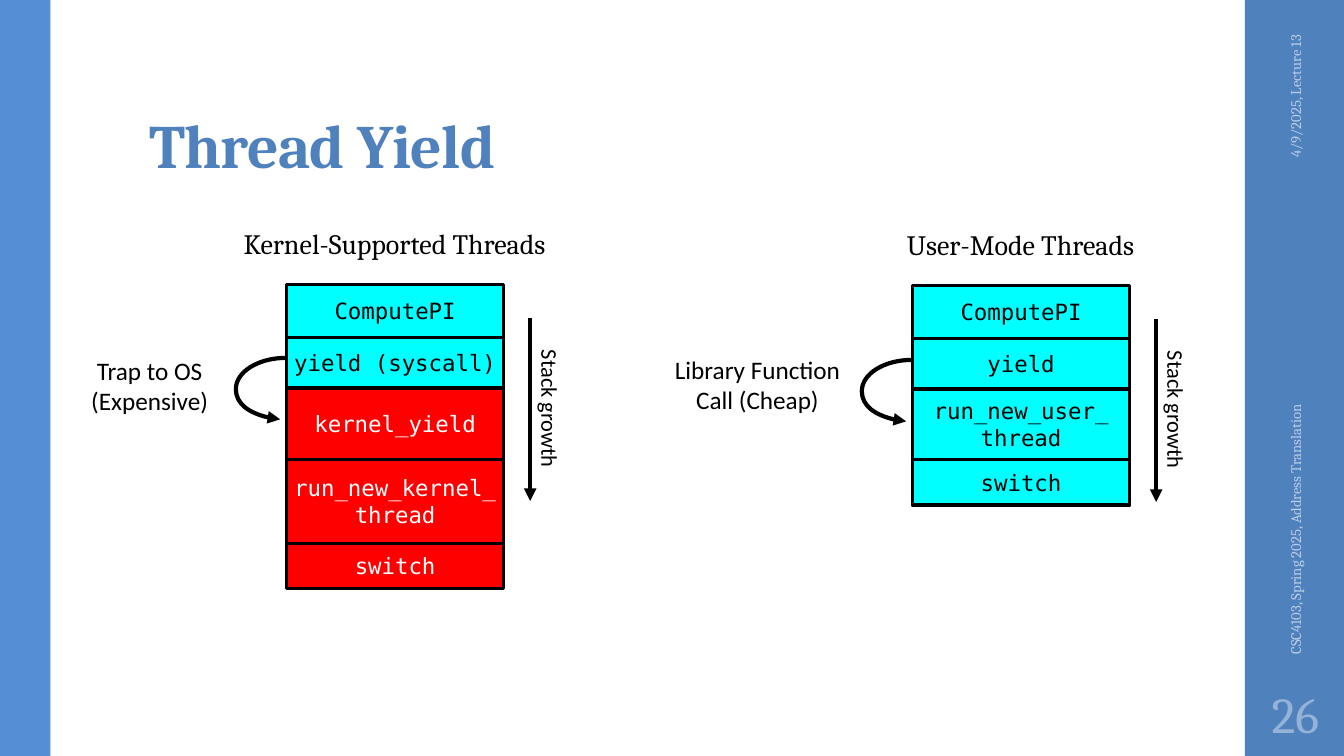
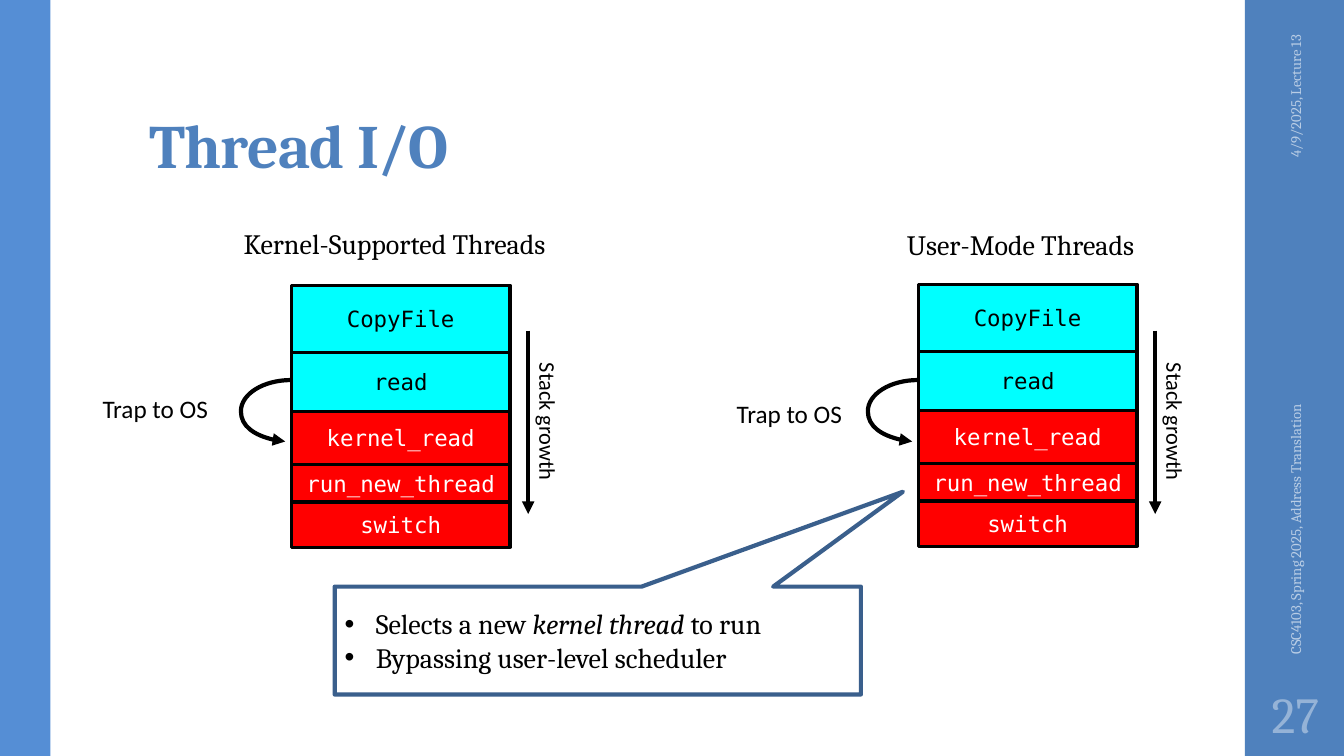
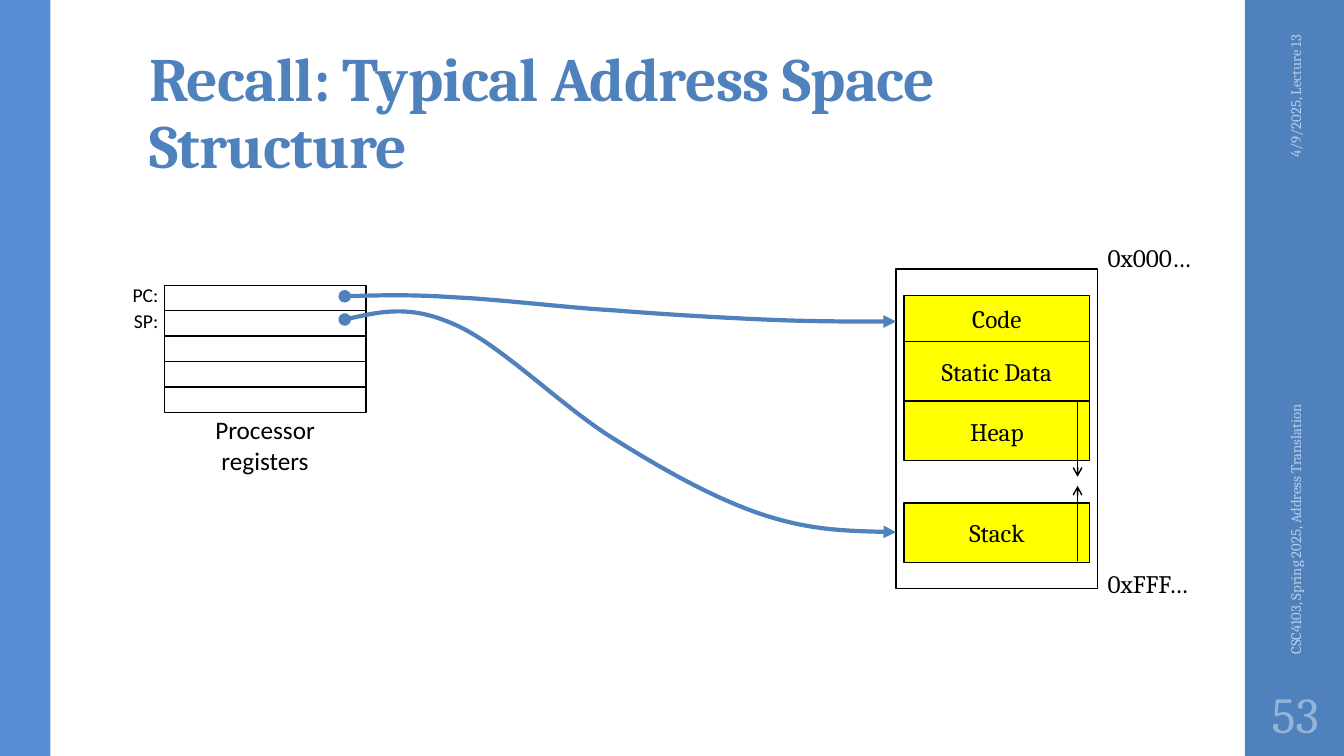
"""Build three lecture slides on thread switching and address space layout."""
from lxml.etree import SubElement
from pptx import Presentation
from pptx.dml.color import RGBColor
from pptx.enum.shapes import MSO_CONNECTOR, MSO_SHAPE
from pptx.enum.text import MSO_ANCHOR, MSO_AUTO_SIZE, PP_ALIGN
from pptx.oxml.ns import qn
from pptx.util import Inches, Pt

CELL = Inches(0.1)
COLUMNS, ROWS = 133.33, 75
COLORS = {
    "blue": "4F81BD", "light_blue": "558ED5", "dark_blue": "3A5F8C",
    "footer": "B9CDE5", "number": "95B3D7", "black": "000000",
    "white": "FFFFFF", "user": "00FFFF", "kernel": "FF0000", "yellow": "FFFF00",
}
SERIF, SANS, MONO = "Cambria", "Calibri", "DejaVu Sans Mono"


def add_box(slide, place, text="", size=18, font=SERIF, color="black", fill=None,
            line=None, weight=1, align=PP_ALIGN.CENTER, anchor=MSO_ANCHOR.MIDDLE,
            wrap=False, rotation=0, preset=MSO_SHAPE.RECTANGLE):
    """Add a text box, or a shape when it has a fill or a line; place is in cells."""
    left, top, width, height = [round(value * CELL) for value in place]
    if fill or line:
        shape = slide.shapes.add_shape(preset, left, top, width, height)
        shape.shadow.inherit = False
        if fill:
            shape.fill.solid()
            shape.fill.fore_color.rgb = RGBColor.from_string(COLORS[fill])
        else:
            shape.fill.background()
        if line:
            shape.line.color.rgb = RGBColor.from_string(COLORS[line])
            shape.line.width = Pt(weight)
        else:
            shape.line.fill.background()
    else:
        shape = slide.shapes.add_textbox(left, top, width, height)
    shape.rotation = rotation
    shape.text_frame.text = text
    shape.text_frame.word_wrap = wrap
    shape.text_frame.vertical_anchor = anchor
    for paragraph in shape.text_frame.paragraphs:
        paragraph.alignment = align
        for run in paragraph.runs:
            run.font.size = Pt(size)
            run.font.name = font
            run.font.color.rgb = RGBColor.from_string(COLORS[color])
    return shape


def add_arrow(slide, points, color="black", weight=3, head=None, tail="triangle"):
    """Join two points by a straight line, or more points by Bezier curves."""
    points = [(round(x * CELL), round(y * CELL)) for x, y in points]
    if len(points) == 2:
        shape = slide.shapes.add_connector(MSO_CONNECTOR.STRAIGHT, *points[0], *points[1])
    else:
        builder = slide.shapes.build_freeform(*points[0])
        builder.add_line_segments(points[1:], close=False)
        shape = builder.convert_to_shape()
        shape.fill.background()
        outline = shape.element.find(".//" + qn("a:path"))
        segments = outline.findall(qn("a:lnTo"))
        for start in range(0, len(segments), 3):
            curve = SubElement(outline, qn("a:cubicBezTo"))
            for segment in segments[start:start + 3]:
                curve.append(segment[0])
                outline.remove(segment)
    shape.line.color.rgb = RGBColor.from_string(COLORS[color])
    shape.line.width = Pt(weight)
    line = shape.line._get_or_add_ln()
    for tag, kind in (("a:headEnd", head), ("a:tailEnd", tail)):
        if kind:
            SubElement(line, qn(tag)).set("type", kind)
    SubElement(shape.element.spPr, qn("a:effectLst"))


presentation = Presentation()
presentation.slide_width = round(COLUMNS * CELL)
presentation.slide_height = ROWS * CELL
layout = presentation.slide_layouts[5]

layout_title = layout.placeholders[0]
layout_title.left, layout_title.top = round(13.8 * CELL), round(3.2 * CELL)
layout_title.width, layout_title.height = 106 * CELL, round(15.3 * CELL)
title_frame = layout_title.text_frame
title_frame.vertical_anchor = MSO_ANCHOR.BOTTOM
title_frame.auto_size = MSO_AUTO_SIZE.NONE
title_frame.word_wrap = True
title_frame.margin_top, title_frame.margin_bottom = Inches(0.03), Inches(0.05)

slides = []
for title, number in (("Thread Yield", "26"), ("Thread I/O", "27"),
                      ("Recall: Typical Address Space Structure", "53")):
    slide = presentation.slides.add_slide(layout)
    slides.append(slide)
    slide.shapes.title.text_frame.text = title
    paragraph = slide.shapes.title.text_frame.paragraphs[0]
    paragraph.alignment = PP_ALIGN.LEFT
    paragraph.line_spacing = 0.9
    run = paragraph.runs[0]
    run.font.size, run.font.name, run.font.bold = Pt(44), SERIF, True
    run.font.color.rgb = RGBColor.from_string(COLORS["blue"])
    run.font._element.set("spc", "-50")
    add_box(slide, (118.1, 10.9, 20.8, 4), "4/9/2025, Lecture 13", 10.5,
            color="footer", align=PP_ALIGN.RIGHT, wrap=True, rotation=270)
    add_box(slide, (108.9, 44.3, 39.2, 4), "CSC4103, Spring 2025, Address Translation", 10.5,
            color="footer", align=PP_ALIGN.LEFT, wrap=True, rotation=270)
    add_box(slide, (123.5, 67.5, 10, 6.5), number, 36, color="number")

for left, width, color in ((123.5, COLUMNS - 123.5, "blue"), (0, 5, "light_blue")):
    band = add_box(slides[0], (left, 0, width, ROWS), fill=color)
    layout.shapes.element.insert(2, band.element)

KERNEL_HEADING = ("Kernel-Supported Threads", (20.8, 21.9, 36.7, 4.4))
USER_HEADING = ("User-Mode Threads", (87.4, 22, 27.7, 4.4))
IO_ROWS = (("CopyFile", 6.7, "user"), ("read", 5.8, "user"), ("kernel_read", 5.3, "kernel"),
           ("run_new_thread", 3.7, "kernel"), ("switch", 4.5, "kernel"))
LOOP = ((0, 0), (-2.8, 0), (-5, 1.4), (-5, 3.1), (-5, 4.6), (-3.1, 5.9), (-0.6, 6.1))
STACKS = (
    (slides[0], KERNEL_HEADING, 28.4, 28.2, 21.6, 24.2, 31.5, 35.5,
     "Trap to OS\n(Expensive)", (7.2, 34.7, 15.3, 7.1),
     (("ComputePI", 5.3, "user"), ("yield (syscall)", 5, "user"),
      ("kernel_yield", 7.1, "kernel"), ("run_new_kernel_\vthread", 8.3, "kernel"),
      ("switch", 4.5, "kernel"))),
    (slides[0], USER_HEADING, 90.5, 28.3, 21.6, 24.2, 31.6, 35.7,
     "Library Function\nCall (Cheap)", (65.1, 34.6, 20.1, 7.1),
     (("ComputePI", 5.3, "user"), ("yield", 5, "user"),
      ("run_new_user_\vthread", 7, "user"), ("switch", 4.5, "user"))),
    (slides[1], KERNEL_HEADING, 28.9, 28.3, 21.7, 23.5, 32.8, 37.7,
     "Trap to OS", (8, 38.5, 14.8, 4), IO_ROWS),
    (slides[1], USER_HEADING, 91.1, 28.2, 21.7, 23.5, 32.8, 37.7,
     "Trap to OS", (70.9, 39, 14.8, 4), IO_ROWS),
)
for (slide, heading, left, top, width, growth_offset, growth_top, loop_top,
     call, call_place, frames) in STACKS:
    add_box(slide, heading[1], heading[0], 20)
    for name, height, fill in frames:
        add_box(slide, (left, top, width, height), name, 16, MONO,
                "white" if fill == "kernel" else "black", fill, "black", 2.25)
        top += height
    growth_left = left + growth_offset
    add_arrow(slide, ((growth_left, growth_top), (growth_left, growth_top + 18.2)))
    add_box(slide, (growth_left - 5.5, growth_top + 7.2, 15, 3.7), "Stack growth", 16, SANS,
            rotation=90)
    add_arrow(slide, [(left + x, loop_top + y) for x, y in LOOP])
    add_box(slide, call_place, call, 18, SANS)

callout = add_box(slides[1], (33.2, 58.2, 52.2, 10.7), line="dark_blue", weight=3, wrap=True,
                  preset=MSO_SHAPE.RECTANGULAR_CALLOUT)
callout.adjustments[0], callout.adjustments[1] = 0.58, -1.38
callout.text_frame.text = "\n"
notes = (("Selects a new ", "kernel thread", " to run"), ("Bypassing user-level scheduler",))
for paragraph, pieces in zip(callout.text_frame.paragraphs, notes):
    paragraph.alignment = PP_ALIGN.LEFT
    properties = paragraph._p.get_or_add_pPr()
    properties.set("marL", str(Inches(0.31)))
    properties.set("indent", str(-Inches(0.31)))
    SubElement(properties, qn("a:buFont")).set("typeface", "Arial")
    SubElement(properties, qn("a:buChar")).set("char", "•")
    for piece in pieces:
        run = paragraph.add_run()
        run.text = piece
        run.font.size, run.font.name = Pt(20), SERIF
        run.font.italic = piece == "kernel thread"
        run.font.color.rgb = RGBColor.from_string(COLORS["black"])

memory_slide = slides[2]
for row in range(5):
    add_box(memory_slide, (16.3, 28.3 + row * 2.52, 20, 2.52), line="black")
for row, register in enumerate(("PC:", "SP:")):
    add_box(memory_slide, (11.4, 27.5 + row * 2.6, 5.3, 3.4), register, 14, SANS,
            align=PP_ALIGN.RIGHT)
add_box(memory_slide, (19.6, 40.6, 13.4, 7.1), "Processor\nregisters", 18, SANS)

add_box(memory_slide, (88.9, 26.7, 20, 31.7), line="black")
for top, width, address in ((23.5, 11.5, "0x000…"), (55.9, 12.3, "0xFFF…")):
    add_box(memory_slide, (108.9, top, width, 4), address, align=PP_ALIGN.LEFT)
for top, height, segment in ((29.3, 4.6, "Code"), (33.9, 5.9, "Static Data"),
                             (39.8, 5.9, "Heap"), (49.9, 5.9, "Stack")):
    add_box(memory_slide, (89.7, top, 18.4, height), segment, fill="yellow", line="black")
for start, end in ((55.7, 48.2), (39.8, 47.3)):
    add_arrow(memory_slide, ((106.9, start), (106.9, end)), weight=1, tail="arrow")

CURVE_COLUMNS = (34.2, 37.4, 40.7, 45.1, 49.6, 55.9, 61, 66.1, 71.2, 75.8, 80.4, 84.7, 88.9)
for curve_rows in (
    (29.4, 29.3, 29.2, 29.5, 29.7, 30.5, 30.8, 31.2, 31.5, 31.7, 31.9, 31.9, 31.9),
    (31.7, 31, 30.2, 32.2, 34.1, 40.5, 43.6, 46.8, 49.6, 51.1, 52.6, 52.7, 52.8),
):
    add_arrow(memory_slide, list(zip(CURVE_COLUMNS, curve_rows)), "blue", head="oval")

presentation.save("out.pptx")
